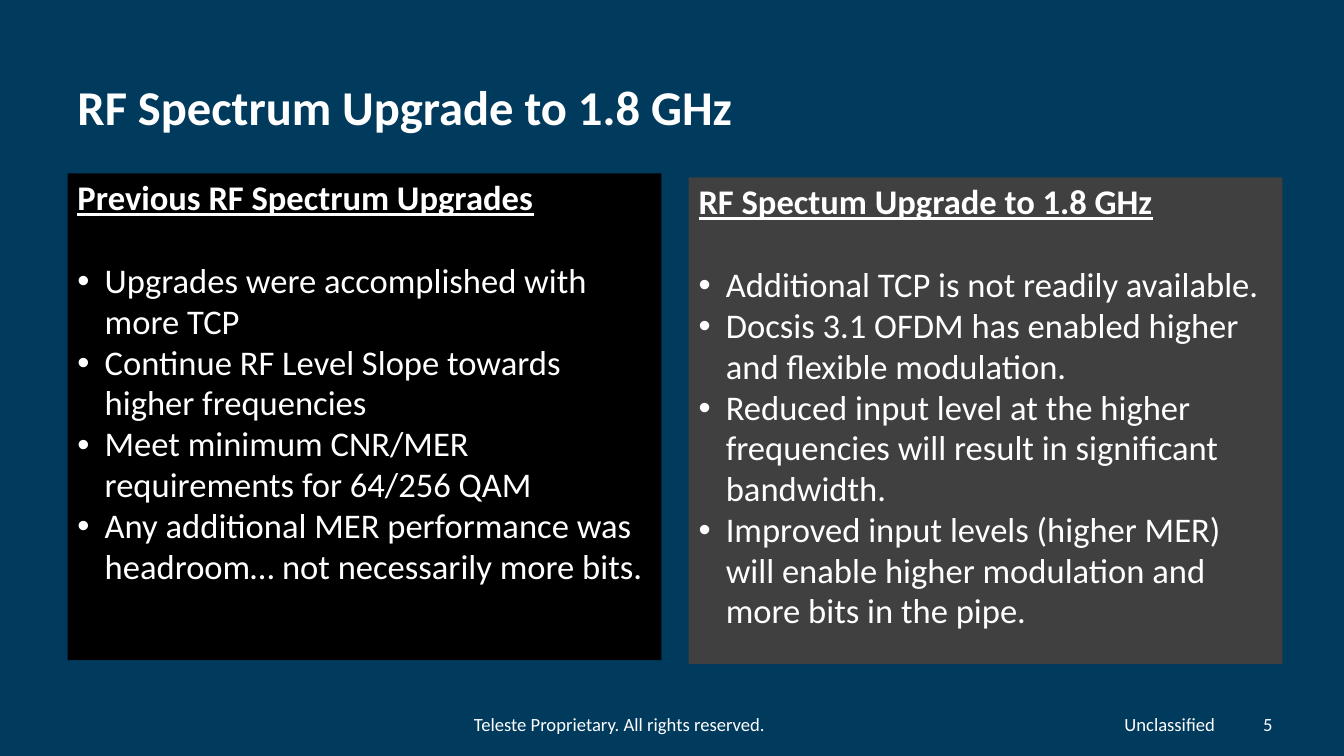
from pptx import Presentation
from pptx.dml.color import RGBColor
from pptx.enum.shapes import MSO_SHAPE
from pptx.enum.text import MSO_ANCHOR, PP_ALIGN
from pptx.oxml import parse_xml
from pptx.oxml.ns import nsdecls
from pptx.util import Inches, Pt

COLORS = {"navy": "003A5D", "black": "000000", "gray": "404040", "white": "FFFFFF"}
FONT = "Calibri"
BODY_SIZE = 24.7
HANGING = Inches(0.27)

PREVIOUS_UPGRADES = [
    "Upgrades were accomplished with more TCP",
    "Continue RF Level Slope towards higher frequencies",
    "Meet minimum CNR/MER requirements for 64/256 QAM",
    "Any additional MER performance was headroom… not necessarily more bits.",
]
NEW_UPGRADE = [
    "Additional TCP is not readily available.",
    "Docsis 3.1 OFDM has enabled higher and flexible modulation.",
    "Reduced input level at the higher frequencies will result in significant bandwidth.",
    "Improved input levels (higher MER) will enable higher modulation and more bits in the pipe.",
]


def color(name):
    return RGBColor.from_string(COLORS[name])


def write(para, text, size=BODY_SIZE, bold=False, underline=False,
          align=PP_ALIGN.LEFT, before=None, spacing=None, bullet=False):
    if bullet:
        properties = para._p.get_or_add_pPr()
        properties.set("marL", str(HANGING))
        properties.set("indent", str(-HANGING))
        properties.append(parse_xml(f'<a:buFont {nsdecls("a")} typeface="Arial"/>'))
        properties.append(parse_xml(f'<a:buChar {nsdecls("a")} char="•"/>'))
    para.alignment = align
    if before is not None:
        para.space_before = Pt(before)
    if spacing is not None:
        para.line_spacing = spacing
    span = para.add_run()
    span.text = text
    span.font.name = FONT
    span.font.size = Pt(size)
    span.font.bold = bold
    span.font.underline = underline
    span.font.color.rgb = color("white")


def add_label(page, box, text, **style):
    frame = page.shapes.add_textbox(*map(Inches, box)).text_frame
    frame.word_wrap = True
    frame.vertical_anchor = MSO_ANCHOR.TOP
    write(frame.paragraphs[0], text, **style)


def add_panel(page, box, fill, heading, points):
    panel = page.shapes.add_shape(MSO_SHAPE.RECTANGLE, *map(Inches, box))
    panel.shadow.inherit = False
    panel.fill.solid()
    panel.fill.fore_color.rgb = color(fill)
    panel.line.fill.background()
    frame = panel.text_frame
    frame.word_wrap = True
    frame.vertical_anchor = MSO_ANCHOR.TOP
    write(frame.paragraphs[0], heading, bold=True, underline=True, spacing=0.98)
    for index, point in enumerate(points):
        write(frame.add_paragraph(), point, bullet=True, spacing=0.98,
              before=0.3 if index else 30)


def add_footer(page, top, height):
    parts = [
        (3.81, 4.67, "Teleste Proprietary. All rights reserved.", PP_ALIGN.CENTER),
        (8.77, 3.38, "Unclassified", PP_ALIGN.RIGHT),
        (12.14, 0.58, "5", PP_ALIGN.RIGHT),
    ]
    for left, width, text, align in parts:
        add_label(page, (left, top, width, height), text, size=13.3, align=align)


def main():
    deck = Presentation()
    deck.slide_width = Inches(13.33)
    deck.slide_height = Inches(7.5)
    page = deck.slides.add_slide(deck.slide_layouts[6])
    page.background.fill.solid()
    page.background.fill.fore_color.rgb = color("navy")

    add_label(page, (0.67, 0.71, 12.19, 1.23), "RF Spectrum Upgrade to 1.8 GHz",
              size=34.7, bold=True)
    add_panel(page, (0.67, 1.72, 5.89, 4.83), "black",
              "Previous RF Spectrum Upgrades", PREVIOUS_UPGRADES)
    add_panel(page, (6.83, 1.76, 5.89, 4.83), "gray",
              "RF Spectum Upgrade to 1.8 GHz", NEW_UPGRADE)
    add_footer(page, 7.02, 0.33)
    deck.save("out.pptx")


if __name__ == "__main__":
    main()
